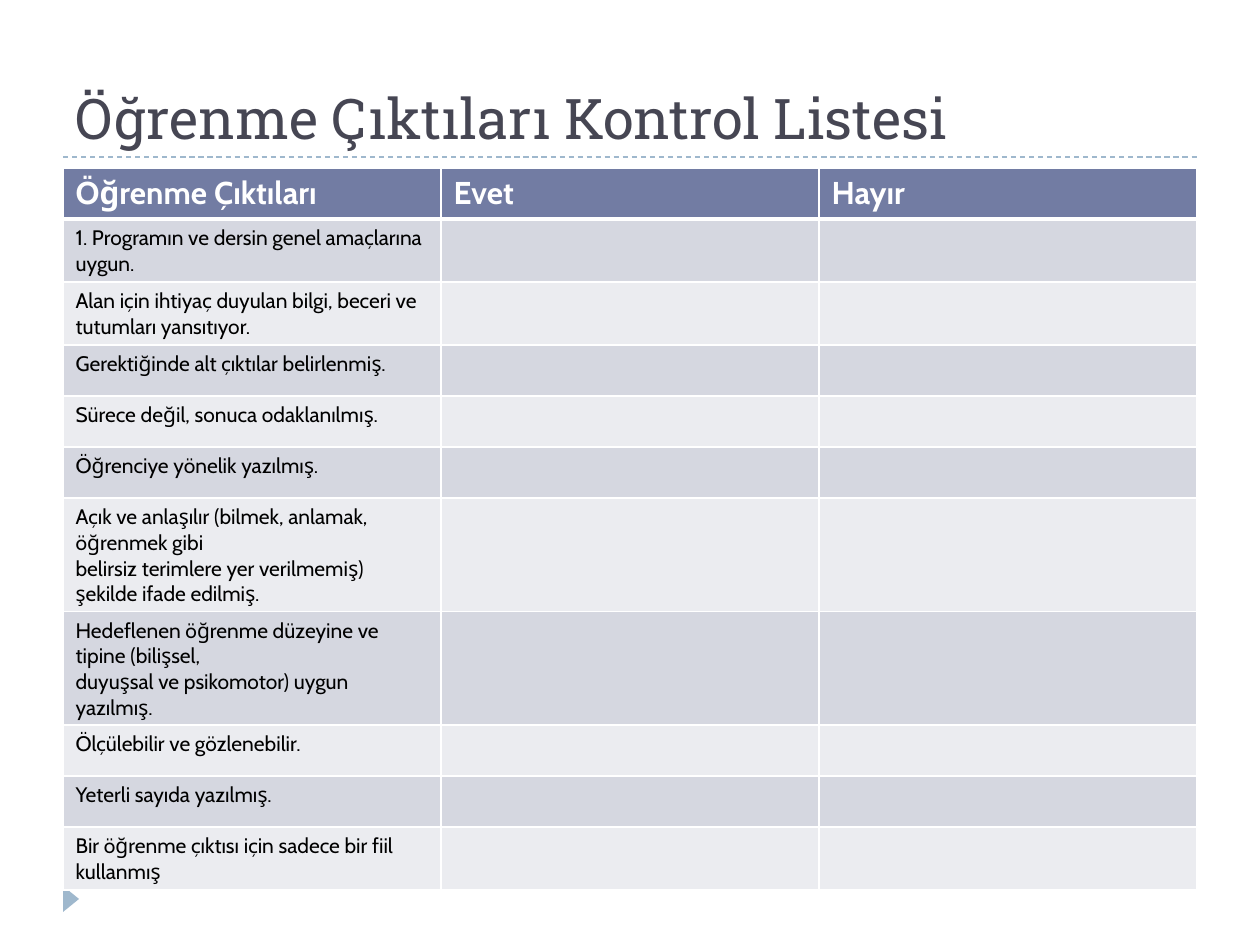
from lxml import etree
from pptx import Presentation
from pptx import util as u
from pptx.dml.color import RGBColor
from pptx.enum import dml, shapes, text
from pptx.oxml.ns import qn

THEME = {
    "title": {"name": "Roboto Slab", "size": u.Pt(32), "color": "464653"},
    "header": {"name": "Cabin", "size": u.Pt(18), "bold": True, "color": "FFFFFF"},
    "body": {"name": "Cabin", "size": u.Pt(12), "bold": False, "color": "000000"},
    "accent": "9FB8CD",
    "header_fill": "727CA3",
    "bands": ["D5D7E0", "EBECF0"],
    "border": "FFFFFF",
}
SCALE = 914400 / 126


def px(*lengths):
    return [u.Emu(round(length * SCALE)) for length in lengths]


def write(frame, content, style):
    frame.text = content
    for paragraph in frame.paragraphs:
        for name, value in style.items():
            if name == "color":
                paragraph.font.color.rgb = RGBColor.from_string(value)
            else:
                setattr(paragraph.font, name, value)


presentation = Presentation()
presentation.slide_width, presentation.slide_height = px(1260, 945)
slide = presentation.slides.add_slide(presentation.slide_layouts[6])
accent = RGBColor.from_string(THEME["accent"])

for y in (876, 157):
    rule = slide.shapes.add_connector(shapes.MSO_CONNECTOR.STRAIGHT, *px(63, y, 1197, y))
    rule.line.color.rgb = accent
    rule.line.width = u.Pt(0.75)
    rule.line.dash_style = dml.MSO_LINE.DASH
    etree.SubElement(rule._element.spPr, qn("a:effectLst"))

marker = slide.shapes.add_shape(shapes.MSO_SHAPE.ISOSCELES_TRIANGLE, *px(58, 891, 26, 16))
marker.rotation = 90
marker.shadow.inherit = False
marker.fill.solid()
marker.fill.fore_color.rgb = accent
marker.line.fill.background()

title = slide.shapes.add_textbox(*px(63, 21, 1134, 136))
title.text_frame.word_wrap = True
title.text_frame.vertical_anchor = text.MSO_ANCHOR.BOTTOM
write(title.text_frame, "Öğrenme Çıktıları Kontrol Listesi", THEME["title"])

headings = ["Öğrenme Çıktıları", "Evet", "Hayır"]
criteria = [
    "1. Programın ve dersin genel amaçlarına uygun.",
    "Alan için ihtiyaç duyulan bilgi, beceri ve tutumları yansıtıyor.",
    "Gerektiğinde alt çıktılar belirlenmiş.",
    "Sürece değil, sonuca odaklanılmış.",
    "Öğrenciye yönelik yazılmış.",
    "Açık ve anlaşılır (bilmek, anlamak, öğrenmek gibi\n"
    "belirsiz terimlere yer verilmemiş) şekilde ifade edilmiş.",
    "Hedeflenen öğrenme düzeyine ve tipine (bilişsel,\n"
    "duyuşsal ve psikomotor) uygun yazılmış.",
    "Ölçülebilir ve gözlenebilir.",
    "Yeterli sayıda yazılmış.",
    "Bir öğrenme çıktısı için sadece bir fiil kullanmış",
]
rows = [headings] + [[criterion, "", ""] for criterion in criteria]
row_height = 51
checklist = slide.shapes.add_table(
    len(rows), len(headings), *px(63, 168, 1134, row_height * len(rows))
).table

for row_index, row in enumerate(rows):
    is_header = row_index == 0
    fill = THEME["header_fill"] if is_header else THEME["bands"][(row_index - 1) % 2]
    widths = {"lnL": 1, "lnR": 1, "lnT": 3 if row_index == 1 else 1, "lnB": 3 if is_header else 1}
    for column_index, content in enumerate(row):
        cell = checklist.cell(row_index, column_index)
        write(cell.text_frame, content, THEME["header" if is_header else "body"])
        properties = cell._tc.get_or_add_tcPr()
        for side, width in widths.items():
            border = etree.SubElement(properties, qn(f"a:{side}"), w=str(u.Pt(width)))
            solid = etree.SubElement(border, qn("a:solidFill"))
            etree.SubElement(solid, qn("a:srgbClr"), val=THEME["border"])
        cell.fill.solid()
        cell.fill.fore_color.rgb = RGBColor.from_string(fill)

presentation.save("out.pptx")
